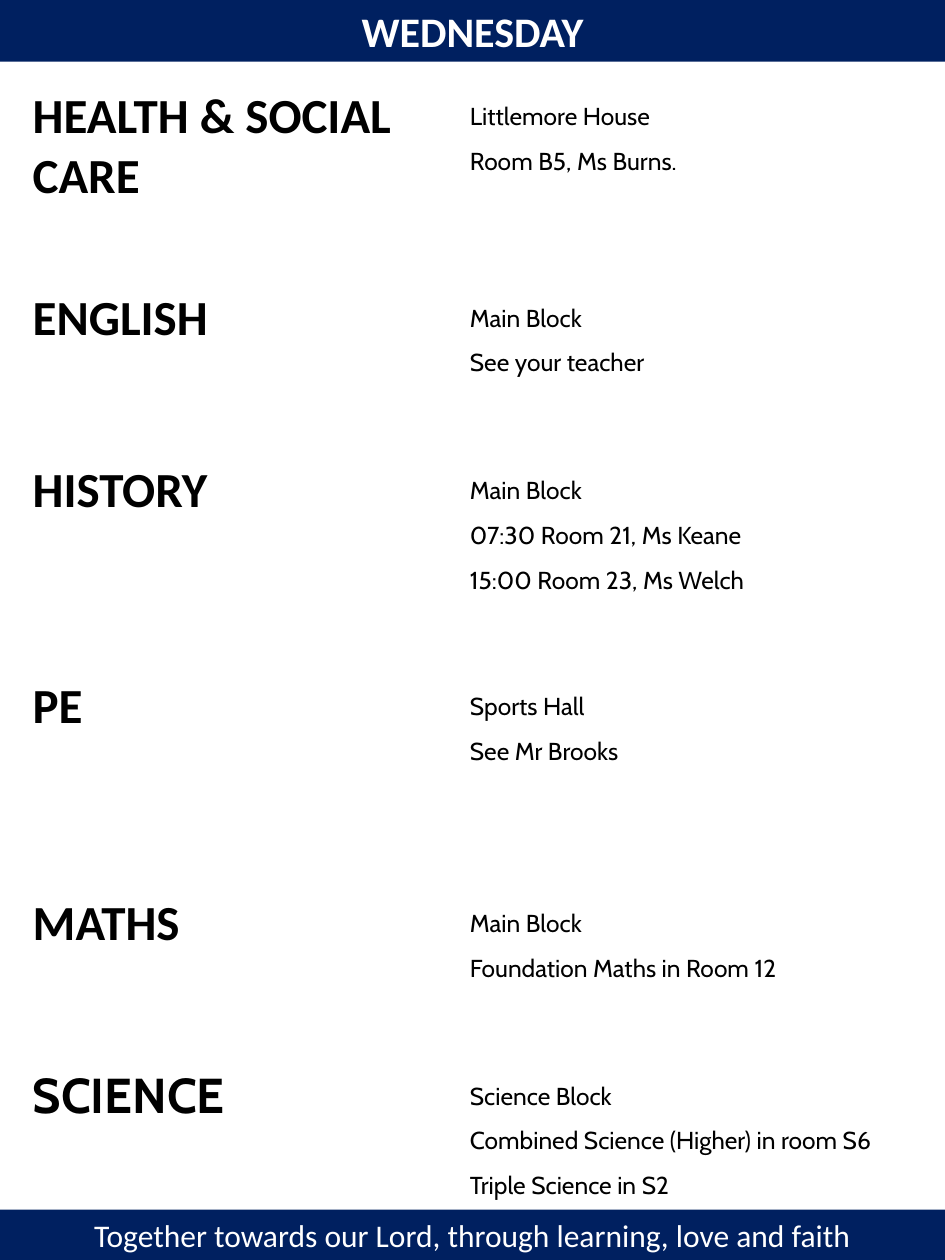
from dataclasses import dataclass

from pptx import Presentation
from pptx import util as u
from pptx.dml.color import RGBColor
from pptx.enum import shapes, text


@dataclass(frozen=True)
class Theme:
    navy: RGBColor = RGBColor(0x00, 0x20, 0x60)
    white: RGBColor = RGBColor(0xFF, 0xFF, 0xFF)
    black: RGBColor = RGBColor(0x00, 0x00, 0x00)
    heading_font: str = "Calibri"
    body_font: str = "Cabin"
    title_size: int = 24
    motto_size: int = 18
    subject_size: int = 28
    detail_size: int = 14


THEME = Theme()
GAP_HEIGHT = 0.55

# Subject, row height, details, subject font
SUBJECTS = [
    ("HEALTH & SOCIAL CARE", 1.05,
     ["Littlemore House", "Room B5, Ms Burns."], THEME.heading_font),
    ("ENGLISH", 0.82, ["Main Block", "See your teacher"], THEME.heading_font),
    ("HISTORY", 1.16,
     ["Main Block", "07:30 Room 21, Ms Keane", "15:00 Room 23, Ms Welch"],
     THEME.heading_font),
    ("PE", 1.17, ["Sports Hall", "See Mr Brooks"], THEME.heading_font),
    ("MATHS", 0.82, ["Main Block", "Foundation Maths in Room 12"],
     THEME.heading_font),
    ("SCIENCE", 1.16,
     ["Science Block", "Combined Science (Higher) in room S6",
      "Triple Science in S2"], THEME.body_font),
]


def add_run(paragraph, words, font, size, color, bold=False):
    run = paragraph.add_run()
    run.text = words
    run.font.name = font
    run.font.size = u.Pt(size)
    run.font.color.rgb = color
    run.font.bold = bold


def format_banner(shape, box, words, size, bold=False):
    """Turn a shape into a navy strip with centred white text."""
    shape.left, shape.top, shape.width, shape.height = map(u.Inches, box)
    shape.fill.solid()
    shape.fill.fore_color.rgb = THEME.navy
    shape.line.fill.background()
    frame = shape.text_frame
    frame.word_wrap = True
    frame.auto_size = text.MSO_AUTO_SIZE.NONE
    frame.vertical_anchor = text.MSO_ANCHOR.MIDDLE
    paragraph = frame.paragraphs[0]
    paragraph.alignment = text.PP_ALIGN.CENTER
    add_run(paragraph, words, THEME.heading_font, size, THEME.white, bold)


def add_title(slide, box):
    format_banner(slide.shapes.title, box, "WEDNESDAY", THEME.title_size, True)


def add_motto(slide, box):
    left, top, width, height = map(u.Inches, box)
    shape = slide.shapes.add_shape(
        shapes.MSO_SHAPE.RECTANGLE, left, top, width, height)
    shape.shadow.inherit = False
    format_banner(
        shape, box,
        "Together towards our Lord, through learning, love and faith",
        THEME.motto_size)


def add_timetable(slide, box, column_widths):
    """List each subject beside its details, with an empty row between."""
    left, top, width, height = map(u.Inches, box)
    row_count = 2 * len(SUBJECTS) - 1
    table = slide.shapes.add_table(
        row_count, len(column_widths), left, top, width, height).table
    table.first_row = False
    table.horz_banding = False
    for column, column_width in zip(table.columns, column_widths):
        column.width = u.Inches(column_width)
    for row in table.rows:
        row.height = u.Inches(GAP_HEIGHT)
    for cell in table.iter_cells():
        cell.fill.background()
        cell.text_frame.paragraphs[0].font.size = u.Pt(THEME.detail_size)

    for index, (subject, row_height, details, font) in enumerate(SUBJECTS):
        row = table.rows[2 * index]
        row.height = u.Inches(row_height)
        subject_cell, detail_cell = row.cells
        add_run(subject_cell.text_frame.paragraphs[0], subject, font,
                THEME.subject_size, THEME.black, True)
        frame = detail_cell.text_frame
        for line, detail in enumerate(details):
            paragraph = frame.add_paragraph() if line else frame.paragraphs[0]
            paragraph.line_spacing = 1.5
            add_run(paragraph, detail, THEME.body_font,
                    THEME.detail_size, THEME.black)


def main():
    presentation = Presentation()
    presentation.slide_width = u.Inches(7.5)
    presentation.slide_height = u.Inches(10)
    slide = presentation.slides.add_slide(presentation.slide_layouts[5])

    # Day, motto and timetable
    add_title(slide, (0, -0.01, 7.5, 0.5))
    add_motto(slide, (0, 9.6, 7.5, 0.4))
    add_timetable(slide, (0.16, 0.64, 7.18, 8.93), (3.47, 3.71))
    presentation.save("out.pptx")


if __name__ == "__main__":
    main()
